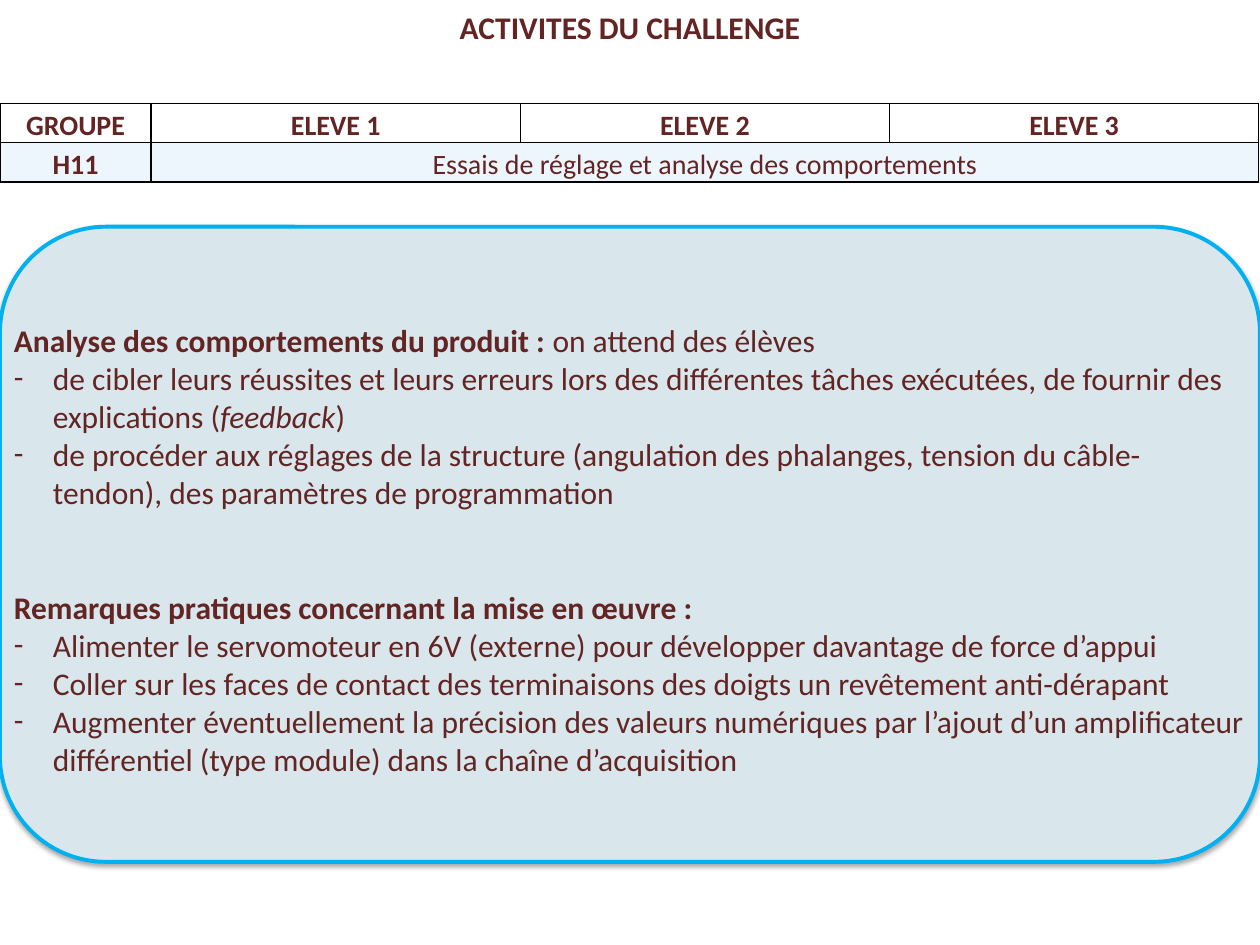
"""Build the slide on the challenge activities of group H11."""
import pptx
import pptx.dml.color
import pptx.enum.shapes
import pptx.enum.text
import pptx.oxml
import pptx.oxml.ns
import pptx.util

Inches, Pt = pptx.util.Inches, pptx.util.Pt
RGBColor = pptx.dml.color.RGBColor
PP_ALIGN = pptx.enum.text.PP_ALIGN
ANCHOR = pptx.enum.text.MSO_ANCHOR

BROWN = RGBColor(0x63, 0x25, 0x23)
PANEL_FILL = RGBColor(0xD9, 0xE6, 0xEB)
PANEL_LINE = RGBColor(0x00, 0xB0, 0xF0)
ROW_FILL = RGBColor(0xEE, 0xF6, 0xFD)
FONT = "Calibri"
NS = pptx.oxml.ns.nsdecls("a")

TITLE = "ACTIVITES DU CHALLENGE"
ROWS = [
    ["GROUPE", "ELEVE 1", "ELEVE 2", "ELEVE 3"],
    ["H11", "Essais de réglage et analyse des comportements"],
]
COL_WIDTHS = [1.2, 2.93, 2.93, 2.93]
ROW_HEIGHT = 0.3
SECTIONS = [
    {
        "box": (0.01, 2.5, 10, 1.62),
        "heading": [("Analyse des comportements du produit : ", "b"),
                    ("on attend des élèves", "")],
        "items": [
            [("de cibler leurs réussites et leurs erreurs lors des différentes "
              "tâches exécutées, de fournir des explications (", ""),
             ("feedback", "i"), (")", "")],
            [("de procéder aux réglages de la structure (angulation des phalanges, "
              "tension du câble-tendon), des paramètres de programmation", "")],
        ],
    },
    {
        "box": (0.01, 4.62, 10, 1.88),
        "heading": [("Remarques pratiques concernant la mise en œuvre :", "b")],
        "items": [
            [("Alimenter le servomoteur en 6V (externe) pour développer davantage "
              "de force d’appui", "")],
            [("Coller sur les faces de contact des terminaisons des doigts un "
              "revêtement anti-dérapant", "")],
            [("Augmenter éventuellement la précision des valeurs numériques par "
              "l’ajout d’un amplificateur différentiel (type module) dans la chaîne "
              "d’acquisition", "")],
        ],
    },
]


def add_xml(parent, xml):
    parent.append(pptx.oxml.parse_xml(xml))


def format_run(r, size, bold=False, italic=False):
    r.font.name, r.font.size = FONT, Pt(size)
    r.font.bold, r.font.italic = bold, italic
    r.font.color.rgb = BROWN


def place(sp, box):
    sp.left, sp.top, sp.width, sp.height = map(Inches, box)
    tf = sp.text_frame
    tf.word_wrap = True
    tf.auto_size = pptx.enum.text.MSO_AUTO_SIZE.NONE
    tf.vertical_anchor = ANCHOR.TOP
    return tf


def fill_title(sp):
    tf = place(sp, (0, 0.01, 10, 0.4))
    tf.text = TITLE
    p = tf.paragraphs[0]
    p.alignment = PP_ALIGN.CENTER
    format_run(p.runs[0], 18, bold=True)


def fill_section(sp, section):
    tf = place(sp, section["box"])
    for i, parts in enumerate([section["heading"], *section["items"]]):
        p = tf.add_paragraph() if i else tf.paragraphs[0]
        pPr = p._p.get_or_add_pPr()
        indent = Inches(0.31) if i else 0
        pPr.set("marL", str(indent))
        pPr.set("indent", str(-indent))
        if i:
            add_xml(pPr, f'<a:buFont {NS} typeface="{FONT}"/>')
            add_xml(pPr, f'<a:buChar {NS} char="-"/>')
        else:
            add_xml(pPr, f"<a:buNone {NS}/>")
        p.space_before = Pt(0)
        for text, style in parts:
            r = p.add_run()
            r.text = text
            format_run(r, 18, style == "b", style == "i")


def add_panel(slide):
    sp = slide.shapes.add_shape(
        pptx.enum.shapes.MSO_SHAPE.ROUNDED_RECTANGLE,
        Inches(0), Inches(1.8), Inches(10), Inches(5.04))
    sp.fill.solid()
    sp.fill.fore_color.rgb = PANEL_FILL
    sp.line.color.rgb = PANEL_LINE
    sp.line.width = Pt(2.25)
    add_xml(sp._element.spPr,
            f'<a:effectLst {NS}><a:outerShdw blurRad="{Pt(3.1)}" dist="{Pt(1.8)}" '
            'dir="5400000" rotWithShape="0"><a:srgbClr val="000000">'
            '<a:alpha val="35000"/></a:srgbClr></a:outerShdw></a:effectLst>')
    return sp


def format_cell(cell, filled):
    cell.margin_left = cell.margin_right = Inches(0.06)
    cell.margin_top = cell.margin_bottom = 0
    tcPr = cell._tc.get_or_add_tcPr()
    for side in "LRTB":
        add_xml(tcPr, f'<a:ln{side} {NS} w="{Pt(1)}"><a:solidFill>'
                      f'<a:srgbClr val="000000"/></a:solidFill></a:ln{side}>')
    if filled:
        cell.fill.solid()
        cell.fill.fore_color.rgb = ROW_FILL
    else:
        cell.fill.background()


def add_groups(slide):
    frame = slide.shapes.add_table(
        len(ROWS), len(COL_WIDTHS), Inches(0), Inches(0.82),
        Inches(sum(COL_WIDTHS)), Inches(ROW_HEIGHT * len(ROWS)))
    table = frame.table
    for col, width in zip(table.columns, COL_WIDTHS):
        col.width = Inches(width)
    for i, row in enumerate(table.rows):
        row.height = Inches(ROW_HEIGHT)
        for j, cell in enumerate(row.cells):
            format_cell(cell, filled=i > 0)
            if j < len(ROWS[i]):
                cell.text = ROWS[i][j]
                p = cell.text_frame.paragraphs[0]
                p.alignment = PP_ALIGN.CENTER
                p.line_spacing = 1.15
                format_run(p.runs[0], 16, bold=i == 0 or j == 0)
    table.cell(1, 1).merge(table.cell(1, 3))
    return frame


def main():
    prs = pptx.Presentation()
    prs.slide_width, prs.slide_height = Inches(10), Inches(7.5)
    slide = prs.slides.add_slide(prs.slide_layouts.get_by_name("Two Content"))
    title, *bodies = list(slide.placeholders)[:3]
    fill_title(title)
    for sp, section in zip(bodies, SECTIONS):
        fill_section(sp, section)
    groups, panel = add_groups(slide), add_panel(slide)
    for sp in (groups, panel):
        title._element.addprevious(sp._element)
    prs.save("out.pptx")


if __name__ == "__main__":
    main()
